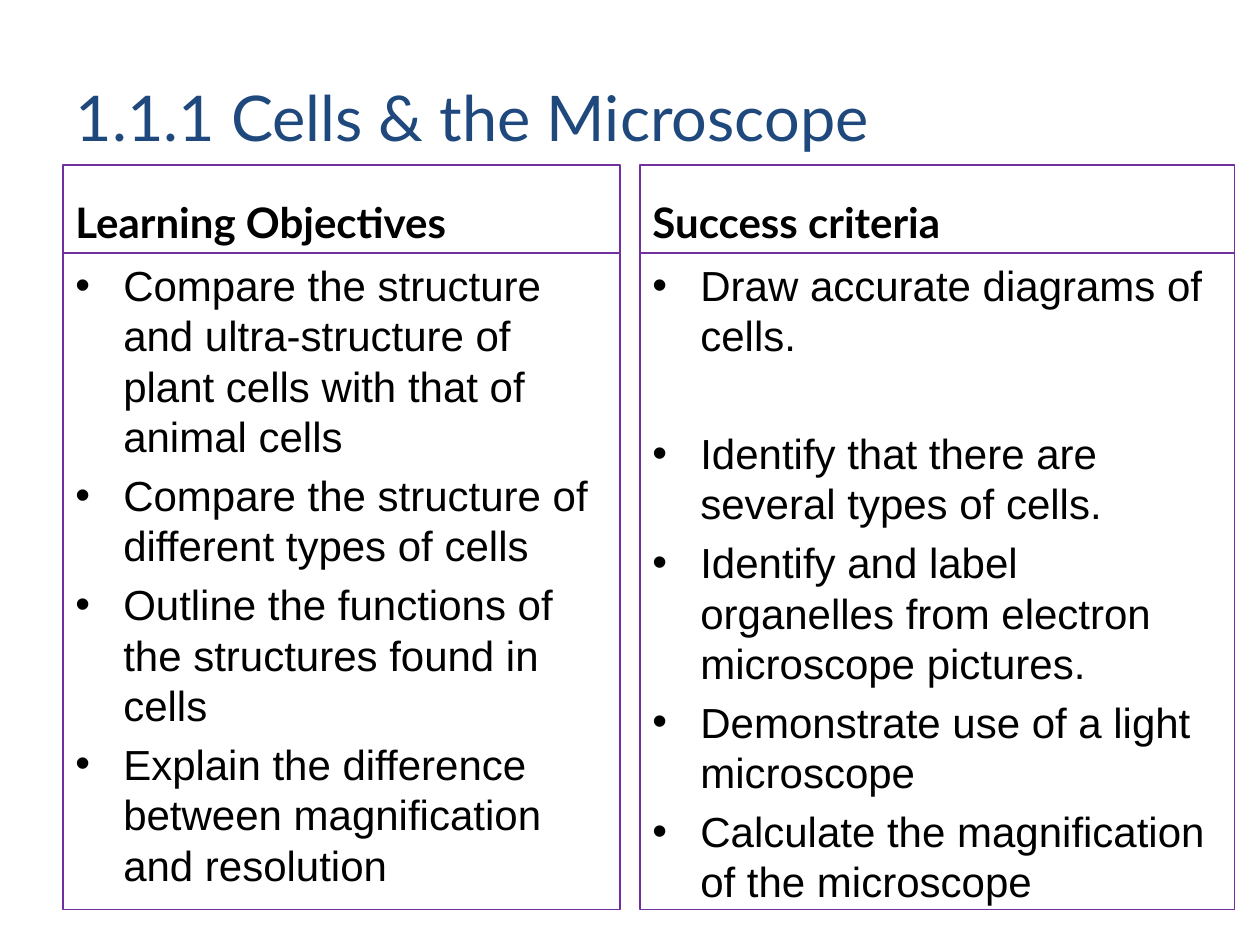
from pptx import Presentation
from pptx.dml.color import RGBColor as RGB
from pptx.enum.shapes import MSO_SHAPE as Shape
from pptx.enum.text import MSO_ANCHOR as Anchor, PP_ALIGN as Align
from pptx.util import Inches, Pt
from lxml import etree

NAVY = RGB(0x1F, 0x49, 0x7D)
PURPLE = RGB(0x70, 0x30, 0xA0)
BLACK = RGB(0, 0, 0)
NS = "http://schemas.openxmlformats.org/drawingml/2006/main"
HEAD = 0.7

GOALS = [
    "Compare the structure and ultra-structure of plant cells with that of animal cells",
    "Compare the structure of different types of cells",
    "Outline the functions of the structures found in cells",
    "Explain the difference between magnification and resolution",
]
CHECKS = [
    "Draw accurate diagrams of cells.",
    "Identify that there are several types of cells.",
    "Identify and label organelles from electron microscope pictures.",
    "Demonstrate use of a light microscope",
    "Calculate the magnification of the microscope",
]


def style(par, face, size, color, bold=False):
    par.alignment = Align.LEFT
    for run in par.runs:
        font = run.font
        font.name, font.size, font.bold = face, Pt(size), bold
        font.color.rgb = color


def add_bullet(par):
    props = par._p.get_or_add_pPr()
    props.set("marL", str(Inches(0.38)))
    props.set("indent", str(Inches(-0.38)))
    face = etree.SubElement(props, f"{{{NS}}}buFont")
    face.set("typeface", "Arial")
    mark = etree.SubElement(props, f"{{{NS}}}buChar")
    mark.set("char", "•")


def add_panel(slide, left, top, width, height, anchor):
    box = slide.shapes.add_shape(
        Shape.RECTANGLE, Inches(left), Inches(top), Inches(width), Inches(height))
    box.shadow.inherit = False
    box.fill.background()
    box.line.color.rgb = PURPLE
    box.line.width = Pt(0.75)
    frame = box.text_frame
    frame.word_wrap = True
    frame.vertical_anchor = anchor
    return frame


def add_column(slide, left, top, width, height, head, items, gap=0):
    frame = add_panel(slide, left, top, width, HEAD, Anchor.BOTTOM)
    frame.text = head
    style(frame.paragraphs[0], "Lato", 24, BLACK, True)

    frame = add_panel(slide, left, top + HEAD, width, height - HEAD, Anchor.TOP)
    frame.text = "\n".join(items)
    for i, par in enumerate(frame.paragraphs):
        add_bullet(par)
        par.line_spacing = Pt(28.8)
        par.space_before = Pt(4.8 if i else 0)
        style(par, "Arial", 24, BLACK)
    frame.paragraphs[0].space_after = Pt(gap)


def set_title(slide, left, top, width, height, text):
    title = slide.shapes.title
    title.left, title.top = Inches(left), Inches(top)
    title.width, title.height = Inches(width), Inches(height)
    title.text_frame.text = text
    title.text_frame.vertical_anchor = Anchor.MIDDLE
    style(title.text_frame.paragraphs[0], "Lato", 36, NAVY)


def main():
    deck = Presentation()
    deck.slide_width, deck.slide_height = Inches(10), Inches(7.5)
    slide = deck.slides.add_slide(deck.slide_layouts[5])
    set_title(slide, 0.5, 0.3, 9, 1.25, "1.1.1 Cells & the Microscope")
    add_column(slide, 0.5, 1.31, 4.42, 5.91, "Learning Objectives", GOALS)
    add_column(slide, 5.08, 1.31, 4.72, 5.91, "Success criteria", CHECKS, 33.6)
    deck.save("out.pptx")


if __name__ == "__main__":
    main()
